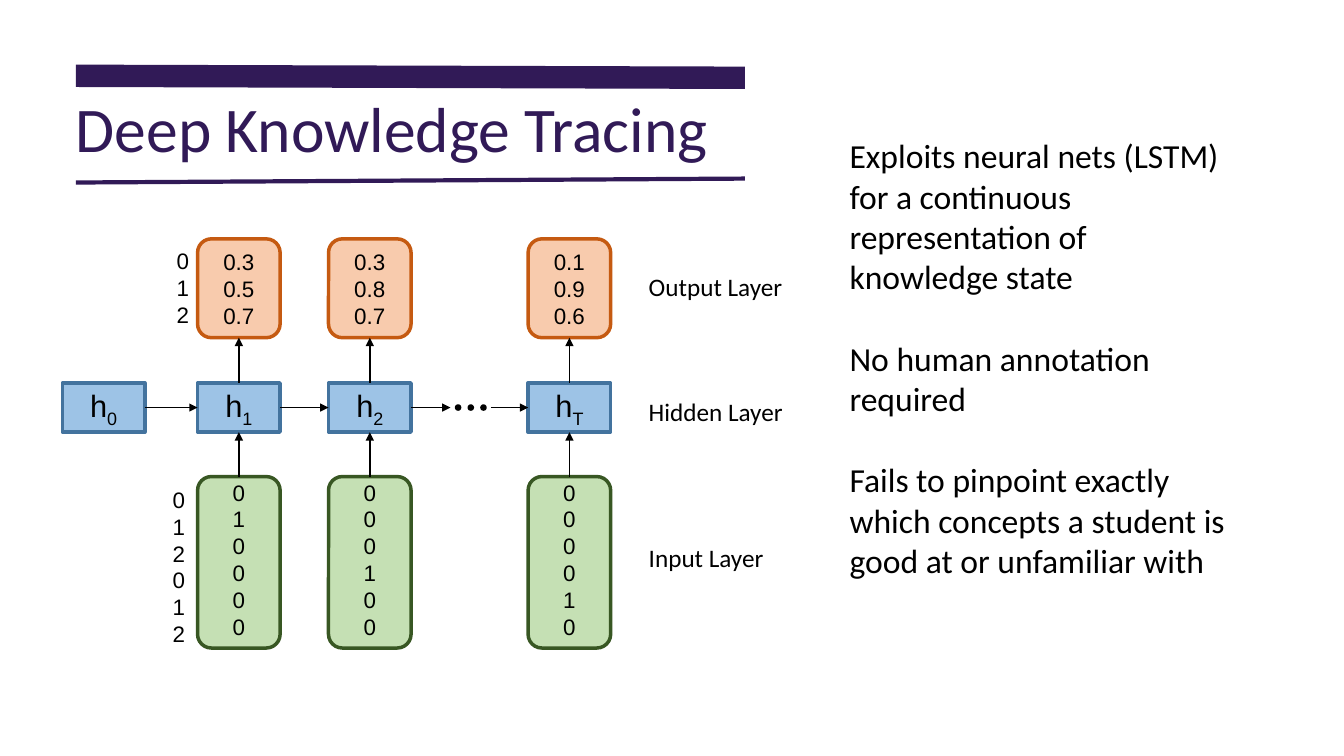
from pptx import Presentation
from pptx.dml.color import RGBColor
from pptx.enum.shapes import MSO_CONNECTOR, MSO_SHAPE
from pptx.enum.text import MSO_ANCHOR, MSO_AUTO_SIZE, PP_ALIGN
from pptx.oxml.ns import qn
from pptx.util import Cm, Pt
from lxml.etree import SubElement

PURPLE = RGBColor(0x31, 0x1A, 0x57)
BLACK = RGBColor(0, 0, 0)
BLUE, BLUE_EDGE = RGBColor(0x9D, 0xC3, 0xE6), RGBColor(0x43, 0x73, 0x9E)
GREEN, GREEN_EDGE = RGBColor(0xC5, 0xE0, 0xB4), RGBColor(0x38, 0x57, 0x23)
ORANGE, ORANGE_EDGE = RGBColor(0xF8, 0xCB, 0xAD), RGBColor(0xC5, 0x5A, 0x11)

TITLE = "Deep Knowledge Tracing"
POINTS = [
    "Exploits neural nets (LSTM) for a continuous representation of knowledge state",
    "No human annotation required",
    "Fails to pinpoint exactly which concepts a student is good at or unfamiliar with",
]
STEPS = [
    ("1", 4.98, ["0.3", "0.5", "0.7"], "010000"),
    ("2", 8.28, ["0.3", "0.8", "0.7"], "000100"),
    ("T", 13.31, ["0.1", "0.9", "0.6"], "000010"),
]
LAYERS = [("Output Layer", 6.71), ("Hidden Layer", 9.86), ("Input Layer", 13.54)]
INDEXES = [("012", 3.99, 6.1, 2.31), ("012012", 3.89, 12.12, 4.37)]
RULES = [(1.91, 1.96, 16), (4.6, 4.5, 3)]

START_X, BOX_W = 1.57, 2.08
OUTPUT_Y, OUTPUT_H = 6.02, 2.49
HIDDEN_Y, HIDDEN_H = 9.65, 1.24
INPUT_Y, INPUT_H = 12.01, 4.32
MIDDLE_Y = HIDDEN_Y + HIDDEN_H / 2
DOT_X, DOT_STEP, DOT_SIZE = 11.48, 0.32, 0.13
DOTS_LEFT, DOTS_RIGHT = 11.35, 12.37

prs = Presentation()
prs.slide_width, prs.slide_height = Cm(33.87), Cm(19.05)
s = prs.slides.add_slide(prs.slide_layouts[5])


def write(sp, lines, size, font="Calibri", color=BLACK, align=PP_ALIGN.LEFT, spacing=None):
    tf = sp.text_frame
    tf.word_wrap = True
    tf.text = "\n".join(lines)
    for p in tf.paragraphs:
        p.alignment = align
        p.line_spacing = spacing
        for r in p.runs:
            r.font.size, r.font.name = Pt(size), font
            r.font.color.rgb = color
    return tf


def write_digits(sp, lines):
    return write(sp, lines, 16, "Arial", align=PP_ALIGN.CENTER, spacing=Pt(19.2))


def add_box(kind, x, y, w, h, fill, edge, width=2.5):
    sp = s.shapes.add_shape(kind, Cm(x), Cm(y), Cm(w), Cm(h))
    sp.shadow.inherit = False
    sp.fill.solid()
    sp.fill.fore_color.rgb = fill
    sp.line.color.rgb = edge
    sp.line.width = Pt(width)
    tf = sp.text_frame
    tf.vertical_anchor = MSO_ANCHOR.MIDDLE
    tf.margin_top = tf.margin_bottom = 0
    return sp


def add_hidden(sub, x):
    sp = add_box(MSO_SHAPE.RECTANGLE, x, HIDDEN_Y, BOX_W, HIDDEN_H, BLUE, BLUE_EDGE)
    p = write(sp, ["h"], 22, "Arial", align=PP_ALIGN.CENTER).paragraphs[0]
    r = p.add_run()
    r.text = sub
    r.font.size, r.font.name = Pt(22), "Arial"
    r.font.color.rgb = BLACK
    r.font._element.set("baseline", "-25000")
    return sp


def add_line(x1, y1, x2, y2, color, width):
    c = s.shapes.add_connector(MSO_CONNECTOR.STRAIGHT, Cm(x1), Cm(y1), Cm(x2), Cm(y2))
    c.line.color.rgb = color
    c.line.width = Pt(width)
    SubElement(c._element.spPr, qn("a:effectLst"))
    return c


def add_arrow(begin=None, end=None, x1=0, x2=0):
    c = add_line(x1, MIDDLE_Y, x2, MIDDLE_Y, BLACK, 1.25)
    if begin:
        c.begin_connect(*begin)
    if end:
        c.end_connect(*end)
    SubElement(c.line._get_or_add_ln(), qn("a:tailEnd"), type="triangle")


def add_text(x, y, w, h):
    return s.shapes.add_textbox(Cm(x), Cm(y), Cm(w), Cm(h))


title = s.shapes.title
title.left, title.top, title.width, title.height = Cm(1.91), Cm(2.57), Cm(23.24), Cm(1.63)
tf = write(title, [TITLE], 45.4, color=PURPLE, spacing=Pt(45.4))
tf.auto_size = MSO_AUTO_SIZE.NONE
tf.vertical_anchor = MSO_ANCHOR.TOP
tf.margin_left = tf.margin_right = tf.margin_top = tf.margin_bottom = 0
for y1, y2, width in RULES:
    add_line(1.91, y1, 18.77, y2, PURPLE, width)

body = write(add_text(21.16, 3.28, 10.03, 11.53), POINTS, 24)
for p in body.paragraphs[1:]:
    p.space_before = Pt(29.3)

for label, y in LAYERS:
    write(add_text(16.1, y, 5.33, 1.27), [label], 18)
for digits, x, y, h in INDEXES:
    write_digits(add_text(x, y, 1.24, h), digits)

hidden = [add_hidden("0", START_X)]
for sub, x, outputs, inputs in STEPS:
    h = add_hidden(sub, x)
    out = add_box(MSO_SHAPE.ROUNDED_RECTANGLE, x, OUTPUT_Y, BOX_W, OUTPUT_H, ORANGE, ORANGE_EDGE)
    write_digits(out, outputs)
    inp = add_box(MSO_SHAPE.ROUNDED_RECTANGLE, x, INPUT_Y, BOX_W, INPUT_H, GREEN, GREEN_EDGE)
    write_digits(inp, inputs).margin_bottom = Cm(0.15)
    add_arrow((h, 0), (out, 2))
    add_arrow((inp, 0), (h, 2))
    hidden.append(h)

h0, h1, h2, h_last = hidden
add_arrow((h0, 3), (h1, 1))
add_arrow((h1, 3), (h2, 1))
add_arrow(begin=(h2, 3), x2=DOTS_LEFT)
add_arrow(end=(h_last, 1), x1=DOTS_RIGHT)
for i in range(3):
    add_box(MSO_SHAPE.OVAL, DOT_X + i * DOT_STEP, MIDDLE_Y - DOT_SIZE / 2,
            DOT_SIZE, DOT_SIZE, BLACK, BLACK, 1)

prs.save("out.pptx")
